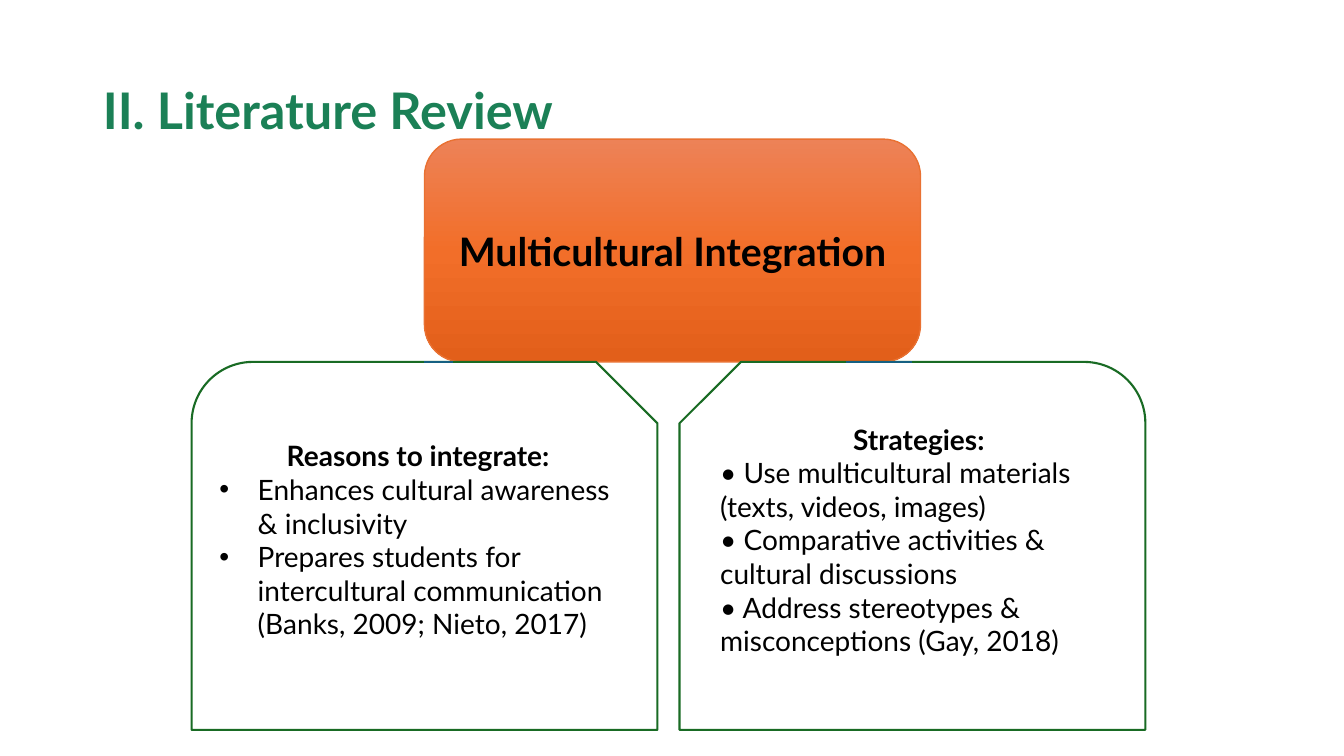
from copy import deepcopy
from dataclasses import dataclass

from pptx import Presentation
from pptx.dml.color import RGBColor
from pptx.enum.shapes import MSO_CONNECTOR, MSO_SHAPE
from pptx.enum.text import MSO_ANCHOR, PP_ALIGN
from pptx.oxml.ns import qn
from pptx.util import Inches, Pt


@dataclass(frozen=True)
class Theme:
    """Colours, font and type sizes of the slide."""
    font: str = "Lato"
    title: RGBColor = RGBColor(0x1B, 0x80, 0x56)
    text: RGBColor = RGBColor(0, 0, 0)
    panel: RGBColor = RGBColor(0xFF, 0xFF, 0xFF)
    panel_line: RGBColor = RGBColor(0x19, 0x6B, 0x24)
    topic_line: RGBColor = RGBColor(0xE9, 0x71, 0x32)
    link: RGBColor = RGBColor(0x15, 0x60, 0x82)
    topic_stops: tuple = ("ED8257", "F26E29", "E25F1A")
    title_size: Pt = Pt(36)
    topic_size: Pt = Pt(28)
    body_size: Pt = Pt(20)
    thin: Pt = Pt(1)
    thick: Pt = Pt(1.5)


THEME = Theme()
REASONS = (
    "Enhances cultural awareness & inclusivity",
    "Prepares students for intercultural communication (Banks, 2009; Nieto, 2017)",
)
STRATEGIES = (
    "• Use multicultural materials (texts, videos, images)",
    "• Comparative activities & cultural discussions",
    "• Address stereotypes & misconceptions (Gay, 2018)",
)
TOPIC_LEFT, TOPIC_TOP, TOPIC_WIDTH, TOPIC_HEIGHT = 4.21, 1.38, 4.92, 2.21
PANEL_TOP = TOPIC_TOP + TOPIC_HEIGHT
HANGING = Inches(0.38)


def apply(target, values):
    """Set each attribute of target from a dict."""
    for name, value in values.items():
        setattr(target, name, value)


def write(p, text, size, color=THEME.text, bold=False, align=PP_ALIGN.LEFT):
    """Fill a paragraph with one formatted run."""
    p.alignment = align
    r = p.add_run()
    r.text = text
    apply(r.font, {"name": THEME.font, "size": size, "bold": bold})
    r.font.color.rgb = color


def add_bullet(p):
    """Give a paragraph a round bullet with a hanging indent."""
    pPr = p._p.get_or_add_pPr()
    pPr.set("marL", str(HANGING))
    pPr.set("indent", str(-HANGING))
    pPr.makeelement(qn("a:buFont"), {"typeface": "Arial"})
    font = pPr.makeelement(qn("a:buFont"), {"typeface": "Arial"})
    pPr.extend([font, pPr.makeelement(qn("a:buChar"), {"char": "•"})])


def add_box(slide, kind, box, line, width):
    """Add an outlined shape without shadow and with centred text height."""
    sp = slide.shapes.add_shape(kind, *map(Inches, box))
    sp.shadow.inherit = False
    sp.line.color.rgb = line
    sp.line.width = width
    apply(sp.text_frame, {"word_wrap": True, "vertical_anchor": MSO_ANCHOR.MIDDLE})
    return sp


def add_title(slide, text):
    """Place and format the title placeholder."""
    sp = slide.shapes.title
    box = dict(left=0.92, top=0.4, width=11.5, height=1.45)
    apply(sp, {name: Inches(value) for name, value in box.items()})
    sp.text_frame.vertical_anchor = MSO_ANCHOR.MIDDLE
    p = sp.text_frame.paragraphs[0]
    write(p, text, THEME.title_size, THEME.title, True, PP_ALIGN.JUSTIFY)
    p.line_spacing = 0.9


def add_topic(slide, text):
    """Add the rounded topic box with a vertical gradient."""
    box = (TOPIC_LEFT, TOPIC_TOP, TOPIC_WIDTH, TOPIC_HEIGHT)
    sp = add_box(slide, MSO_SHAPE.ROUNDED_RECTANGLE, box, THEME.topic_line, THEME.thin)
    sp.fill.gradient()
    sp.fill.gradient_angle = 270
    stops = sp._element.spPr.find(qn("a:gradFill")).find(qn("a:gsLst"))
    stops.insert(1, deepcopy(stops[0]))
    for i, (stop, color) in enumerate(zip(sp.fill.gradient_stops, THEME.topic_stops)):
        stop.position = i / 2
        stop.color.rgb = RGBColor.from_string(color)
    write(sp.text_frame.paragraphs[0], text, THEME.topic_size, bold=True,
          align=PP_ALIGN.CENTER)


def add_panel(slide, left, heading, items, bulleted=False, flipped=False):
    """Add a snipped panel holding a heading and its points."""
    sp = add_box(slide, MSO_SHAPE.SNIP_ROUND_RECTANGLE, (left, PANEL_TOP, 4.62, 3.65),
                 THEME.panel_line, THEME.thick)
    sp.fill.solid()
    sp.fill.fore_color.rgb = THEME.panel
    if flipped:
        sp._element.spPr.find(qn("a:xfrm")).set("flipH", "1")
    tf = sp.text_frame
    tf.margin_bottom = Inches(0.35)
    write(tf.paragraphs[0], heading, THEME.body_size, bold=True, align=PP_ALIGN.CENTER)
    for item in items:
        p = tf.add_paragraph()
        if bulleted:
            add_bullet(p)
        write(p, item, THEME.body_size)


def add_link(slide, start, end):
    """Add a short horizontal line along the top of the panels."""
    y = Inches(PANEL_TOP)
    cxn = slide.shapes.add_connector(MSO_CONNECTOR.STRAIGHT, Inches(start), y,
                                     Inches(end), y)
    cxn.line.color.rgb = THEME.link
    cxn.line.width = THEME.thick
    spPr = cxn._element.spPr
    spPr.append(spPr.makeelement(qn("a:effectLst"), {}))


def main():
    """Build the slide and save it."""
    prs = Presentation()
    apply(prs, {"slide_width": Inches(13.33), "slide_height": Inches(7.5)})
    slide = prs.slides.add_slide(prs.slide_layouts[5])
    add_title(slide, "II. Literature Review")
    add_topic(slide, "Multicultural Integration")
    add_panel(slide, 1.9, "Reasons to integrate:", REASONS, bulleted=True)
    add_panel(slide, 6.74, "Strategies:", STRATEGIES, flipped=True)
    add_link(slide, 4.49, TOPIC_LEFT)
    add_link(slide, 8.39, 9.05)
    prs.save("out.pptx")


if __name__ == "__main__":
    main()
